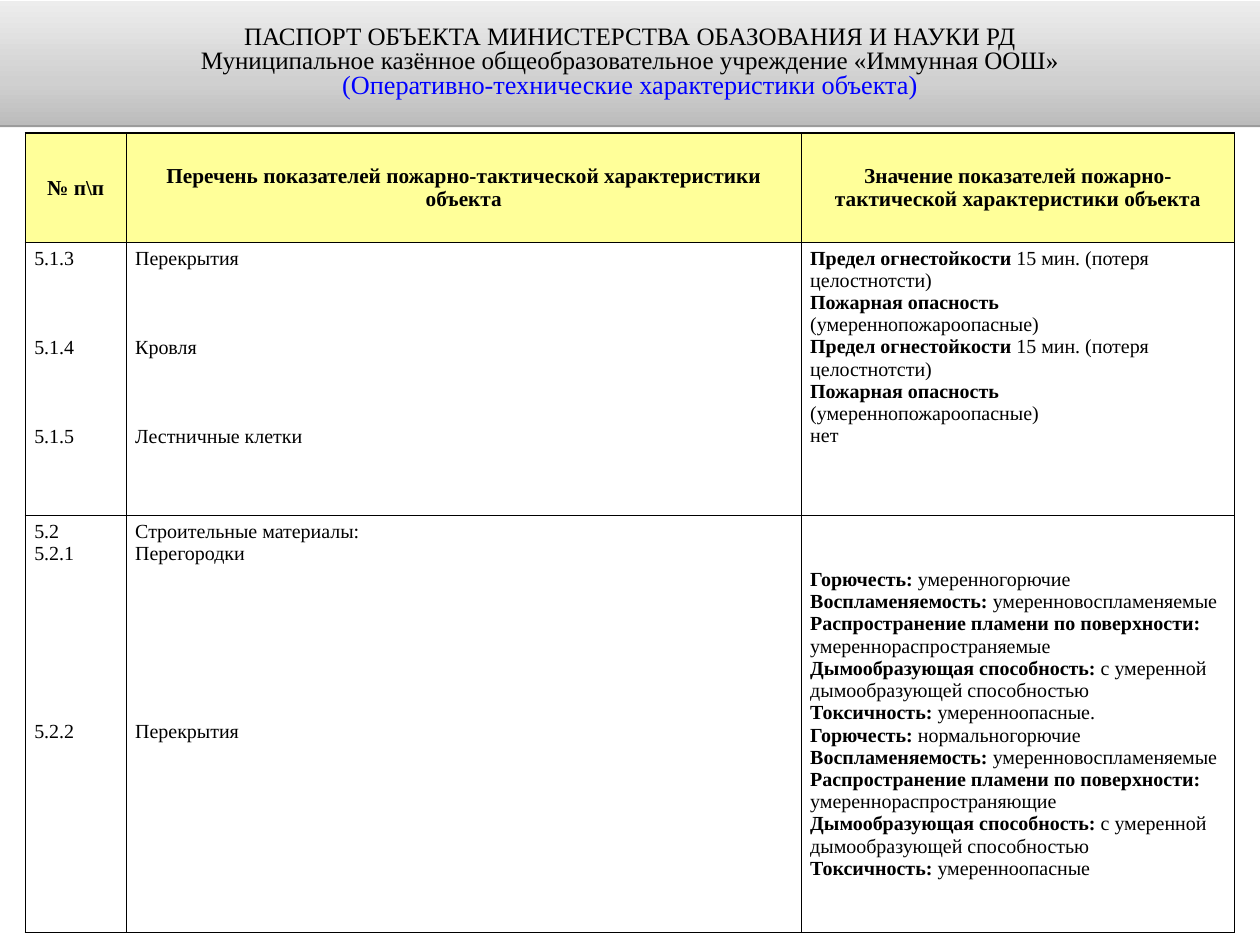
from lxml import etree
from pptx import Presentation
from pptx.dml.color import RGBColor
from pptx.enum.shapes import MSO_SHAPE
from pptx.enum.text import MSO_ANCHOR, PP_ALIGN
from pptx.oxml.ns import qn
from pptx.util import Pt

RECTANGLE = MSO_SHAPE.RECTANGLE
TOP, MIDDLE = MSO_ANCHOR.TOP, MSO_ANCHOR.MIDDLE
LEFT, CENTER = PP_ALIGN.LEFT, PP_ALIGN.CENTER

FONT = "Times New Roman"
COLORS = {
    "black": "000000", "blue": "0000FF", "white": "FFFFFF", "header": "FFFF99",
    "band_bottom": "BCBCBC", "band_middle": "D0D0D0", "band_top": "EDEDED",
}
BODY_SIZE, HEADER_SIZE = 16, 17
LINE_HEIGHT = 17.8  # one body line, used to skip lines between items

COLUMN_WIDTHS = (80.8, 540, 346.6)
ROW_HEIGHTS = (87.8, 218.4, 333.6)

TITLE = [
    ("ПАСПОРТ ОБЪЕКТА МИНИСТЕРСТВА ОБАЗОВАНИЯ И НАУКИ РД", 20, "black"),
    ("Муниципальное казённое общеобразовательное учреждение «Иммунная ООШ»", 20, "black"),
    ("(Оперативно-технические характеристики объекта)", 21, "blue"),
]
HEADERS = [
    "№ п\\п",
    "Перечень показателей пожарно-тактической характеристики объекта",
    "Значение показателей пожарно-тактической характеристики объекта",
]

# Items: (number, name, lines skipped above)
STRUCTURES = [("5.1.3", "Перекрытия", 0), ("5.1.4", "Кровля", 3),
              ("5.1.5", "Лестничные клетки", 3)]
MATERIALS = [("5.2", "Строительные материалы:", 0), ("5.2.1", "Перегородки", 0),
             ("5.2.2", "Перекрытия", 7)]

# Values: (bold part, plain part)
FIRE_RESISTANCE = [
    ("Предел огнестойкости ", "15 мин. (потеря целостнотсти)"),
    ("Пожарная опасность", ""),
    ("", "(умереннопожароопасные)"),
]


def material_values(combustibility, spread, toxicity):
    return [
        ("Горючесть:", f" {combustibility}"),
        ("Воспламеняемость: ", "умеренновоспламеняемые"),
        ("Распространение пламени по поверхности:", ""),
        ("", spread),
        ("Дымообразующая способность: ", "с умеренной дымообразующей способностью"),
        ("Токсичность:", f" {toxicity}"),
    ]


def rgb(name):
    return RGBColor.from_string(COLORS[name])


def add_element(parent, tag, **attributes):
    element = etree.SubElement(parent, qn(tag))
    for key, value in attributes.items():
        element.set(key, str(value))
    return element


def add_color(parent, name):
    return add_element(parent, "a:srgbClr", val=COLORS[name])


def format_run(run, size, color="black", bold=False):
    run.font.name = FONT
    run.font.size = Pt(size)
    run.font.bold = bold
    run.font.color.rgb = rgb(color)


def next_paragraph(text_frame, index):
    return text_frame.add_paragraph() if index else text_frame.paragraphs[0]


def style_cell(cell, fill, anchor):
    properties = cell._tc.get_or_add_tcPr()
    for side in ("a:lnL", "a:lnR", "a:lnT", "a:lnB"):
        line = add_element(properties, side, w=Pt(1))
        add_color(add_element(line, "a:solidFill"), "black")
    cell.fill.solid()
    cell.fill.fore_color.rgb = rgb(fill)
    cell.vertical_anchor = anchor


def write_header(cell, text):
    style_cell(cell, "header", MIDDLE)
    cell.text_frame.text = text
    paragraph = cell.text_frame.paragraphs[0]
    paragraph.alignment = CENTER
    format_run(paragraph.runs[0], HEADER_SIZE, bold=True)


def write_lines(cell, lines, anchor=TOP):
    """Fill a cell with (bold part, plain part, lines skipped above) rows."""
    style_cell(cell, "white", anchor)
    for index, (bold_part, plain_part, skipped) in enumerate(lines):
        paragraph = next_paragraph(cell.text_frame, index)
        paragraph.alignment = LEFT
        paragraph.space_before = Pt(skipped * LINE_HEIGHT)
        for text, bold in ((bold_part, True), (plain_part, False)):
            if text:
                run = paragraph.add_run()
                run.text = text
                format_run(run, BODY_SIZE, bold=bold)


def write_row(table, row, items, values, value_anchor=TOP):
    write_lines(table.cell(row, 0), [("", number, skipped) for number, _, skipped in items])
    write_lines(table.cell(row, 1), [("", name, skipped) for _, name, skipped in items])
    write_lines(table.cell(row, 2), [(bold, plain, 0) for bold, plain in values], value_anchor)


def add_passport_table(slide):
    frame = slide.shapes.add_table(
        len(ROW_HEIGHTS), len(COLUMN_WIDTHS), Pt(20.2), Pt(106.4),
        Pt(sum(COLUMN_WIDTHS)), Pt(sum(ROW_HEIGHTS)))
    table = frame.table
    for column, width in zip(table.columns, COLUMN_WIDTHS):
        column.width = Pt(width)
    for row, height in zip(table.rows, ROW_HEIGHTS):
        row.height = Pt(height)
    for index, text in enumerate(HEADERS):
        write_header(table.cell(0, index), text)
    write_row(table, 1, STRUCTURES, FIRE_RESISTANCE * 2 + [("", "нет")])
    write_row(
        table, 2, MATERIALS,
        material_values("умеренногорючие", "умереннораспространяемые", "умеренноопасные.")
        + material_values("нормальногорючие", "умереннораспространяющие", "умеренноопасные"),
        MIDDLE)


def set_gradient(shape, stops):
    """Vertical gradient, running from the bottom edge to the top."""
    shape.fill.gradient()
    shape.fill.gradient_angle = 90
    stop_list = shape._element.spPr.find(qn("a:gradFill")).find(qn("a:gsLst"))
    for stop in list(stop_list):
        stop_list.remove(stop)
    for percent, color in stops:
        add_color(add_element(stop_list, "a:gs", pos=percent * 1000), color)


def set_shadow(shape):
    shape.shadow.inherit = False
    effects = shape._element.spPr.find(qn("a:effectLst"))
    shadow = add_element(effects, "a:outerShdw", blurRad=0, dist=Pt(1.6),
                         dir=90 * 60000, rotWithShape=0)
    add_element(add_color(shadow, "black"), "a:alpha", val=38000)


def add_title_band(slide):
    band = slide.shapes.add_shape(RECTANGLE, Pt(0), Pt(0.8), Pt(1008), Pt(99.4))
    set_gradient(band, [(0, "band_bottom"), (35, "band_middle"), (100, "band_top")])
    band.line.fill.background()
    set_shadow(band)
    text_frame = band.text_frame
    text_frame.word_wrap = True
    text_frame.vertical_anchor = MIDDLE
    text_frame.margin_left = text_frame.margin_right = Pt(8.6)
    text_frame.margin_top = text_frame.margin_bottom = Pt(4.3)
    for index, (text, size, color) in enumerate(TITLE):
        paragraph = next_paragraph(text_frame, index)
        paragraph.text = text
        paragraph.alignment = CENTER
        paragraph.line_spacing = 0.8
        format_run(paragraph.runs[0], size, color)


def main():
    presentation = Presentation()
    presentation.slide_width, presentation.slide_height = Pt(1008), Pt(756)
    slide = presentation.slides.add_slide(presentation.slide_layouts[6])
    add_passport_table(slide)
    add_title_band(slide)
    presentation.save("out.pptx")


if __name__ == "__main__":
    main()
